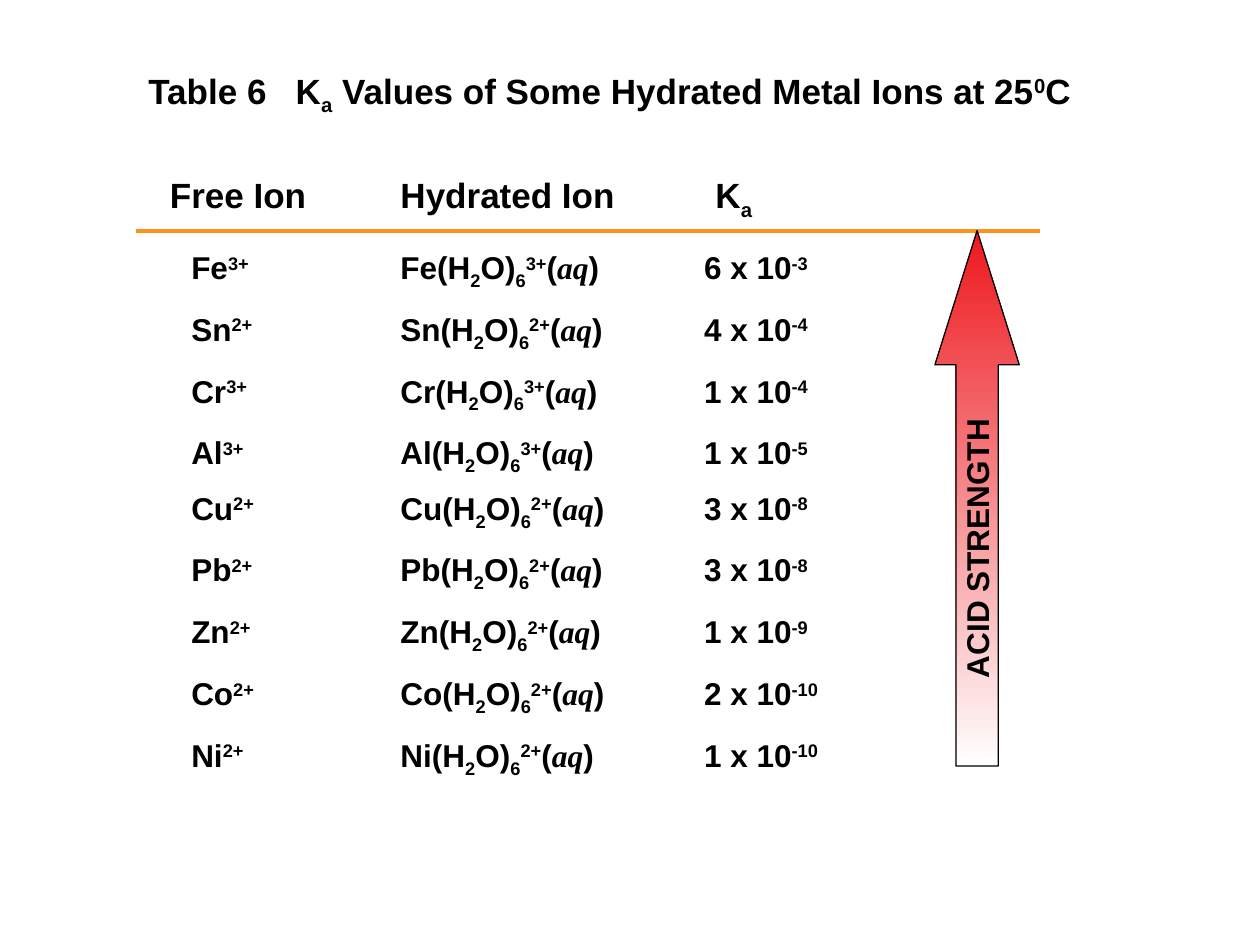
from dataclasses import dataclass

from lxml.etree import SubElement
from pptx import Presentation
from pptx.dml.color import RGBColor
from pptx.enum.shapes import MSO_CONNECTOR, MSO_SHAPE
from pptx.enum.text import MSO_AUTO_SIZE
from pptx.oxml.ns import qn
from pptx.util import Inches, Pt


@dataclass(frozen=True)
class Theme:
    font: str = "Arial"
    state_font: str = "Times New Roman"
    heading_size: int = 20
    body_size: int = 18
    text: RGBColor = RGBColor(0x00, 0x00, 0x00)
    rule: RGBColor = RGBColor(0xFF, 0x92, 0x18)
    strong: RGBColor = RGBColor(0xED, 0x18, 0x1E)
    weak: RGBColor = RGBColor(0xFF, 0xFF, 0xFF)


THEME = Theme()
BASELINES = {"sub": "-25000", "super": "30000"}

HEADING_HEIGHT = 0.43
BODY_HEIGHT = 0.4
HEADER_TOP = 1.33
RULE_TOP = 1.83
ROW_STEP = 0.49

TITLE = [
    ("Table 6   K", ""),
    ("a", "sub"),
    (" Values of Some Hydrated Metal Ions at 25", ""),
    ("0", "super"),
    ("C", ""),
]
HEADERS = [
    (1.25, 1.75, [("Free Ion", "")]),
    (3.08, 1.92, [("Hydrated Ion", "")]),
    (5.58, 0.75, [("K", ""), ("a", "sub")]),
]
ION_BLOCKS = [
    (1.92, [
        ("Fe", "3+", "6", "-3"),
        ("Sn", "2+", "4", "-4"),
        ("Cr", "3+", "1", "-4"),
        ("Al", "3+", "1", "-5"),
    ]),
    (3.83, [
        ("Cu", "2+", "3", "-8"),
        ("Pb", "2+", "3", "-8"),
        ("Zn", "2+", "1", "-9"),
        ("Co", "2+", "2", "-10"),
        ("Ni", "2+", "1", "-10"),
    ]),
]


def add_text(slide, left, top, width, height, pieces, size):
    shape = slide.shapes.add_textbox(
        Inches(left), Inches(top), Inches(width), Inches(height)
    )
    frame = shape.text_frame
    frame.word_wrap = True
    frame.auto_size = MSO_AUTO_SIZE.SHAPE_TO_FIT_TEXT
    paragraph = frame.paragraphs[0]
    paragraph.font.size = Pt(size)
    paragraph.font.bold = True
    paragraph.font.color.rgb = THEME.text
    for text, style in pieces:
        run = paragraph.add_run()
        run.text = text
        run.font.name = THEME.font
        if style == "state":
            run.font.name = THEME.state_font
            run.font.italic = True
        elif style:
            run.font._element.set("baseline", BASELINES[style])
    return shape


def add_heading(slide, left, top, width, pieces):
    add_text(slide, left, top, width, HEADING_HEIGHT, pieces, THEME.heading_size)


def add_body(slide, left, top, width, pieces):
    return add_text(slide, left, top, width, BODY_HEIGHT, pieces, THEME.body_size)


def add_rule(slide, left, right, top):
    rule = slide.shapes.add_connector(
        MSO_CONNECTOR.STRAIGHT, Inches(left), Inches(top), Inches(right), Inches(top)
    )
    rule.line.color.rgb = THEME.rule
    rule.line.width = Pt(2.25)
    SubElement(rule._element.spPr, qn("a:effectLst"))


def add_ion_row(slide, top, metal, charge, factor, exponent):
    hydrated = [
        (f"{metal}(H", ""),
        ("2", "sub"),
        ("O)", ""),
        ("6", "sub"),
        (charge, "super"),
        ("(", ""),
        ("aq", "state"),
        (")", ""),
    ]
    add_body(slide, 1.42, top, 0.83, [(metal, ""), (charge, "super")])
    add_body(slide, 3.08, top, 2.08, hydrated)
    add_body(slide, 5.42, top, 1.42, [(f" {factor} x 10", ""), (exponent, "super")])


def add_strength_arrow(slide):
    arrow = slide.shapes.add_shape(
        MSO_SHAPE.UP_ARROW, Inches(7.42), Inches(RULE_TOP), Inches(0.67), Inches(4.25)
    )
    arrow.shadow.inherit = False
    arrow.adjustments[0] = 0.5
    arrow.adjustments[1] = 1.59
    arrow.fill.gradient()
    arrow.fill.gradient_angle = 270
    for stop, color in zip(arrow.fill.gradient_stops, (THEME.strong, THEME.weak)):
        stop.color.rgb = color
    arrow.line.color.rgb = THEME.text
    arrow.line.width = Pt(0.75)
    label = add_body(slide, 6.59, 4.12, 2.32, [("ACID STRENGTH", "")])
    label.rotation = 270


def main():
    presentation = Presentation()
    presentation.slide_width = Inches(10)
    presentation.slide_height = Inches(7.5)
    slide = presentation.slides.add_slide(presentation.slide_layouts[6])
    add_heading(slide, 1.08, 0.5, 8.17, TITLE)
    for left, width, pieces in HEADERS:
        add_heading(slide, left, HEADER_TOP, width, pieces)
    add_rule(slide, 1.08, 8.25, RULE_TOP)
    for block_top, ions in ION_BLOCKS:
        for index, ion in enumerate(ions):
            add_ion_row(slide, block_top + index * ROW_STEP, *ion)
    add_strength_arrow(slide)
    presentation.save("out.pptx")


if __name__ == "__main__":
    main()
